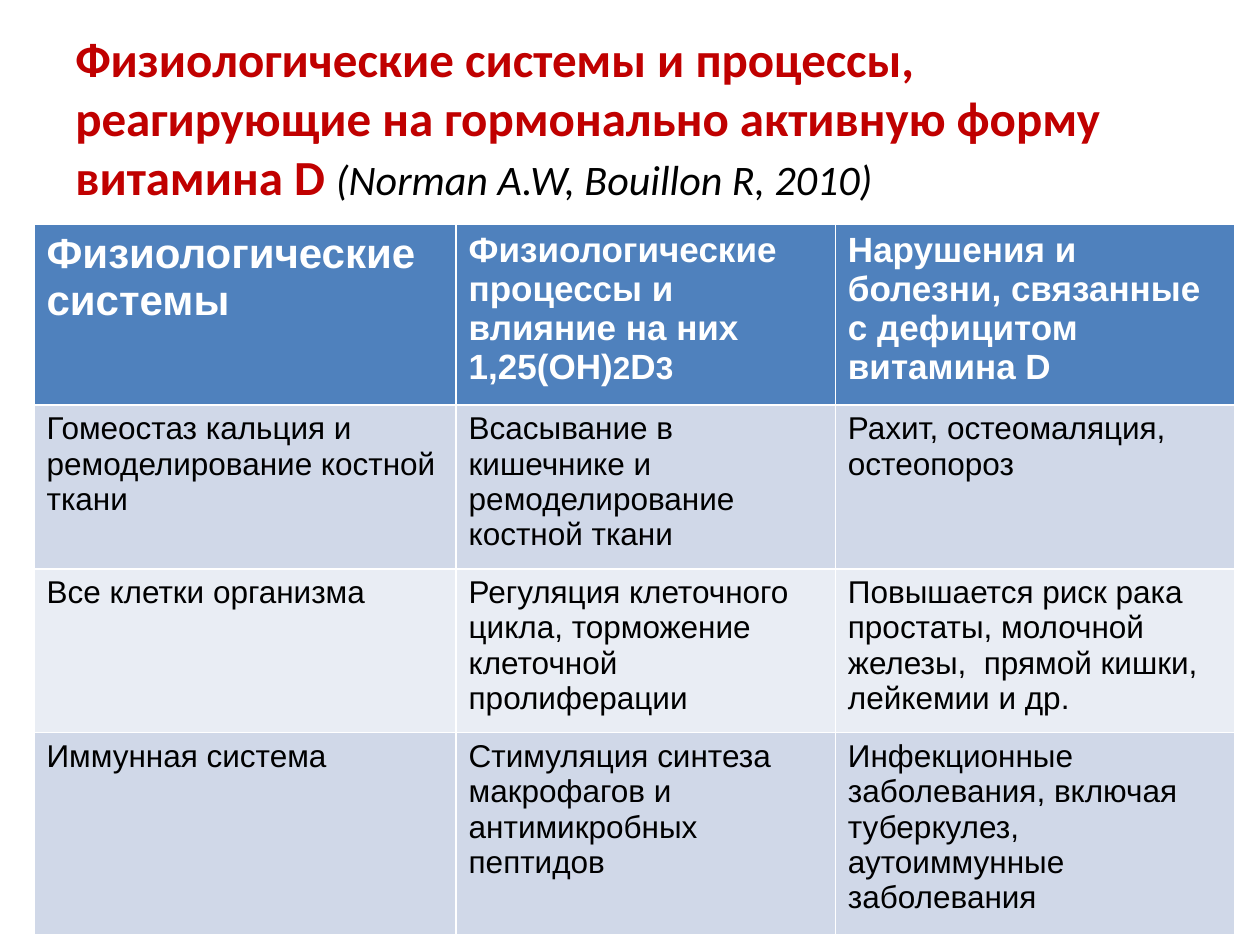
from pptx import Presentation
from pptx.dml.color import RGBColor
from pptx.enum.text import MSO_ANCHOR
from pptx.util import Inches, Pt

COLORS = {
    "title": "C00000",
    "text": "000000",
    "header_text": "FFFFFF",
    "header": "4F81BD",
    "odd_row": "D0D8E8",
    "even_row": "E9EDF4",
}
COLUMN_WIDTHS = [3.35, 3.01, 3.17]
ROW_HEIGHTS = [1.38, 1.25, 1.25, 1.54]

# Each header cell is a list of (text, size) runs.
HEADERS = [
    [("Физиологические системы", 24)],
    [("Физиологические процессы и влияние на них 1,25(OH)", 20),
     ("2", 18), ("D", 20), ("3", 18)],
    [("Нарушения и болезни, связанные с дефицитом витамина D", 20)],
]
BODY = [
    ["Гомеостаз кальция и ремоделирование костной ткани",
     "Всасывание в кишечнике и ремоделирование костной ткани",
     "Рахит, остеомаляция, остеопороз"],
    ["Все клетки организма",
     "Регуляция клеточного цикла, торможение клеточной пролиферации",
     "Повышается риск рака простаты, молочной железы,  прямой кишки, лейкемии и др."],
    ["Иммунная система",
     "Стимуляция синтеза макрофагов и антимикробных пептидов",
     "Инфекционные заболевания, включая туберкулез, аутоиммунные заболевания"],
]


def color(name):
    return RGBColor.from_string(COLORS[name])


def add_span(para, text, size):
    span = para.add_run()
    span.text = text
    span.font.size = Pt(size)
    return span


deck = Presentation()
deck.slide_width, deck.slide_height = Inches(10), Inches(7.5)
page = deck.slides.add_slide(deck.slide_layouts[6])

# Title with its citation
title_box = page.shapes.add_textbox(Inches(0.5), Inches(0.3), Inches(9), Inches(1.25))
title_box.text_frame.word_wrap = True
title_box.text_frame.vertical_anchor = MSO_ANCHOR.MIDDLE
para = title_box.text_frame.paragraphs[0]
para.font.name = "Calibri"
heading = add_span(
    para, "Физиологические системы и процессы, реагирующие на "
    "гормонально активную форму витамина D ", 28)
heading.font.bold = True
heading.font.color.rgb = color("title")
citation = add_span(para, "(Norman A.W, Bouillon R, 2010)", 24)
citation.font.italic = True
citation.font.color.rgb = color("text")
for span in (heading, citation):
    span.font.name = "Calibri"

# Table; the default table style supplies the white cell borders
rows = HEADERS and [HEADERS] + [[[(text, 18)] for text in row] for row in BODY]
table = page.shapes.add_table(
    len(rows), len(COLUMN_WIDTHS), Inches(0.27), Inches(1.78),
    Inches(sum(COLUMN_WIDTHS)), Inches(sum(ROW_HEIGHTS))).table
for column, width in zip(table.columns, COLUMN_WIDTHS):
    column.width = Inches(width)

for row_index, (row, height) in enumerate(zip(rows, ROW_HEIGHTS)):
    table.rows[row_index].height = Inches(height)
    is_header = row_index == 0
    fill = "header" if is_header else "odd_row" if row_index % 2 else "even_row"
    for column_index, spans in enumerate(row):
        cell = table.cell(row_index, column_index)
        cell.fill.solid()
        cell.fill.fore_color.rgb = color(fill)
        para = cell.text_frame.paragraphs[0]
        for text, size in spans:
            span = add_span(para, text, size)
            span.font.name = "Arial"
            span.font.bold = is_header
            span.font.color.rgb = color("header_text" if is_header else "text")

deck.save("out.pptx")
